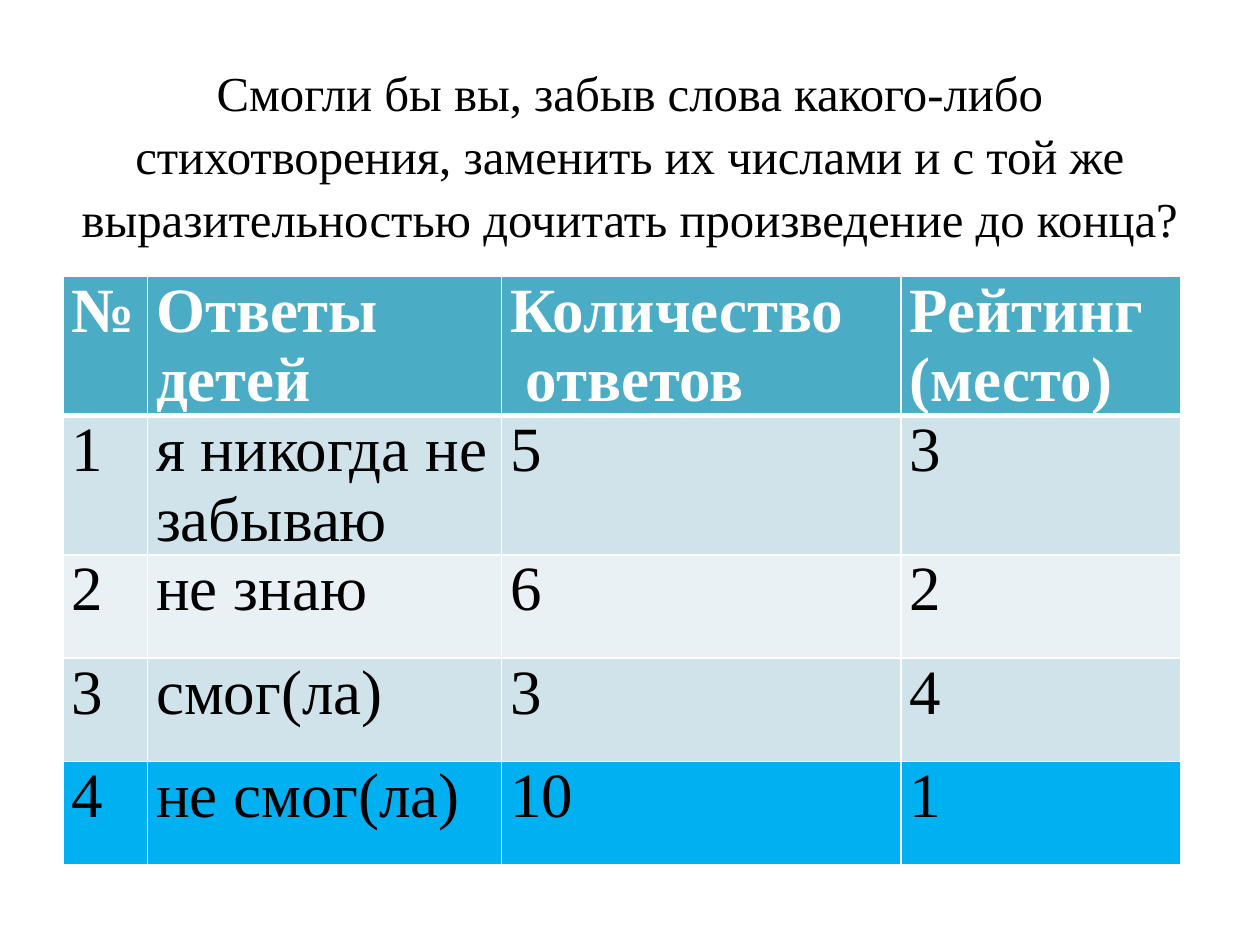
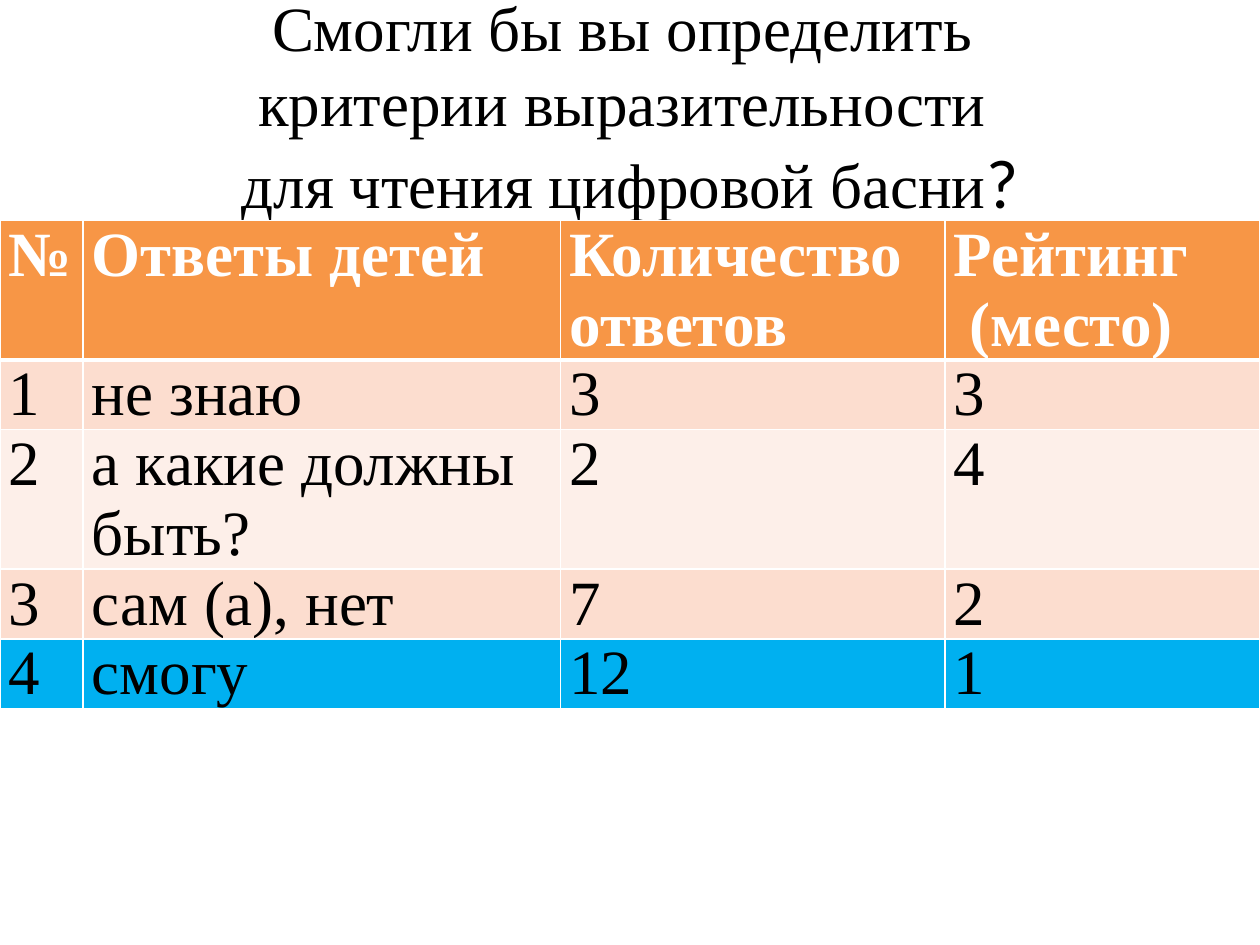
from dataclasses import dataclass

from lxml.etree import SubElement
from pptx import Presentation
from pptx.dml.color import RGBColor
from pptx.enum.text import MSO_ANCHOR, MSO_AUTO_SIZE, PP_ALIGN
from pptx.oxml.ns import qn
from pptx.util import Inches, Pt

WIDTH, HEIGHT = Inches(10), Inches(7.5)
TITLE_ONLY = 5


def cols(count: float) -> int:
    """Length of some of the 100 grid columns of the slide."""
    return round(WIDTH * count / 100)


def rows(count: float) -> int:
    """Length of some of the 75 grid rows of the slide."""
    return round(HEIGHT * count / 75)


@dataclass(frozen=True)
class Theme:
    ink: str = "000000"
    paper: str = "FFFFFF"
    leader: str = "00B0F0"
    serif: str = "Times New Roman"
    sans: str = "Calibri"
    cell_size: float = 36
    cell_inset: float = 0.7
    rule: float = 1
    header_rule: float = 3


THEME = Theme()


@dataclass(frozen=True)
class Piece:
    text: str
    size: float
    face: str = THEME.serif


@dataclass(frozen=True)
class Palette:
    header: str
    odd: str
    even: str


@dataclass(frozen=True)
class Survey:
    question: tuple[Piece, ...]
    question_height: float
    line_spacing: float
    left: float
    top: float
    column_widths: tuple[float, ...]
    row_height: float
    palette: Palette
    answers: tuple[tuple[str, ...], ...]


SURVEYS = (
    Survey(
        question=(Piece("Смогли бы вы, забыв слова какого-либо стихотворения, "
                        "заменить их числами и с той же выразительностью "
                        "дочитать произведение до конца?\n", 27.9),),
        question_height=13.3,
        line_spacing=1.08,
        left=5, top=21.9,
        column_widths=(6.7, 28.1, 31.7, 22.2),
        row_height=8.2,
        palette=Palette("4BACC6", "D0E3EA", "E9F1F5"),
        answers=(
            ("№", "Ответы детей", "Количество\n ответов", "Рейтинг (место)"),
            ("1", "я никогда не забываю", "5", "3"),
            ("2", "не знаю", "6", "2"),
            ("3", "смог(ла)", "3", "4"),
            ("4", "не смог(ла)", "10", "1"),
        ),
    ),
    Survey(
        question=(Piece("Смогли бы вы определить \nкритерии выразительности \n"
                        "для чтения цифровой басни", 36),
                  Piece("?\n", 39.6, THEME.sans)),
        question_height=7.7,
        line_spacing=1,
        left=0, top=17.5,
        column_widths=(6.6, 37.9, 30.5, 25),
        row_height=4.1,
        palette=Palette("F79646", "FCDDCF", "FDEFE9"),
        answers=(
            ("№", "Ответы детей", "Количество\nответов", "Рейтинг\n (место)"),
            ("1", "не знаю", "3", "3"),
            ("2", "а какие должны быть?", "2", "4"),
            ("3", "сам (а), нет", "7", "2"),
            ("4", "смогу", "12", "1"),
        ),
    ),
)


def add_run(paragraph, text: str, size: float, face: str, color: str,
            bold: bool = False) -> None:
    run = paragraph.add_run()
    run.text = text
    font = run.font
    font.size, font.name, font.bold = Pt(size), face, bold
    font.color.rgb = RGBColor.from_string(color)


def add_break(paragraph, size: float) -> None:
    """Line break with its own type size, which sets the line height."""
    paragraph.add_line_break()
    SubElement(paragraph._p.findall(qn("a:br"))[-1], qn("a:rPr"),
               sz=str(round(size * 100)))


def draw_question(slide, survey: Survey) -> None:
    title = slide.shapes.title
    title.left, title.top = cols(5), rows(7.8)
    title.width, title.height = cols(90), rows(survey.question_height)
    frame = title.text_frame
    frame.word_wrap = True
    frame.auto_size = MSO_AUTO_SIZE.NONE
    frame.vertical_anchor = MSO_ANCHOR.MIDDLE
    paragraph = frame.paragraphs[0]
    paragraph.alignment = PP_ALIGN.CENTER
    paragraph.line_spacing = survey.line_spacing
    for piece in survey.question:
        for number, line in enumerate(piece.text.split("\n")):
            if number:
                add_break(paragraph, piece.size)
            if line:
                add_run(paragraph, line, piece.size, piece.face, THEME.ink)


def draw_borders(cell, top: float, bottom: float) -> None:
    properties = cell._tc.get_or_add_tcPr()
    sides = {"lnL": THEME.rule, "lnR": THEME.rule, "lnT": top, "lnB": bottom}
    for side, width in sides.items():
        line = SubElement(properties, qn(f"a:{side}"), w=str(Pt(width)))
        fill = SubElement(line, qn("a:solidFill"))
        SubElement(fill, qn("a:srgbClr"), val=THEME.paper)


def fill_cell(cell, text: str, color: str, header: bool) -> None:
    cell.margin_left = cell.margin_right = cols(THEME.cell_inset)
    cell.margin_top = cell.margin_bottom = 0
    cell.fill.solid()
    cell.fill.fore_color.rgb = RGBColor.from_string(color)
    frame = cell.text_frame
    for number, line in enumerate(text.split("\n")):
        paragraph = frame.add_paragraph() if number else frame.paragraphs[0]
        add_run(paragraph, line, THEME.cell_size, THEME.serif,
                THEME.paper if header else THEME.ink, header)


def draw_answers(slide, survey: Survey) -> None:
    count = len(survey.answers)
    table = slide.shapes.add_table(
        count, len(survey.column_widths), cols(survey.left), rows(survey.top),
        cols(sum(survey.column_widths)), rows(survey.row_height * count)).table
    for column, width in zip(table.columns, survey.column_widths):
        column.width = cols(width)

    # The header, two alternating bands, and the winning answer last
    palette = survey.palette
    colors = [palette.header, palette.odd, palette.even, palette.odd, THEME.leader]
    for row, (answer, color) in enumerate(zip(survey.answers, colors)):
        table.rows[row].height = rows(survey.row_height)
        top = THEME.header_rule if row == 1 else THEME.rule
        bottom = THEME.header_rule if row == 0 else THEME.rule
        for column, text in enumerate(answer):
            cell = table.cell(row, column)
            draw_borders(cell, top, bottom)
            fill_cell(cell, text, color, header=row == 0)


def main() -> None:
    deck = Presentation()
    deck.slide_width, deck.slide_height = WIDTH, HEIGHT
    for survey in SURVEYS:
        slide = deck.slides.add_slide(deck.slide_layouts[TITLE_ONLY])
        draw_question(slide, survey)
        draw_answers(slide, survey)
    deck.save("out.pptx")


if __name__ == "__main__":
    main()
